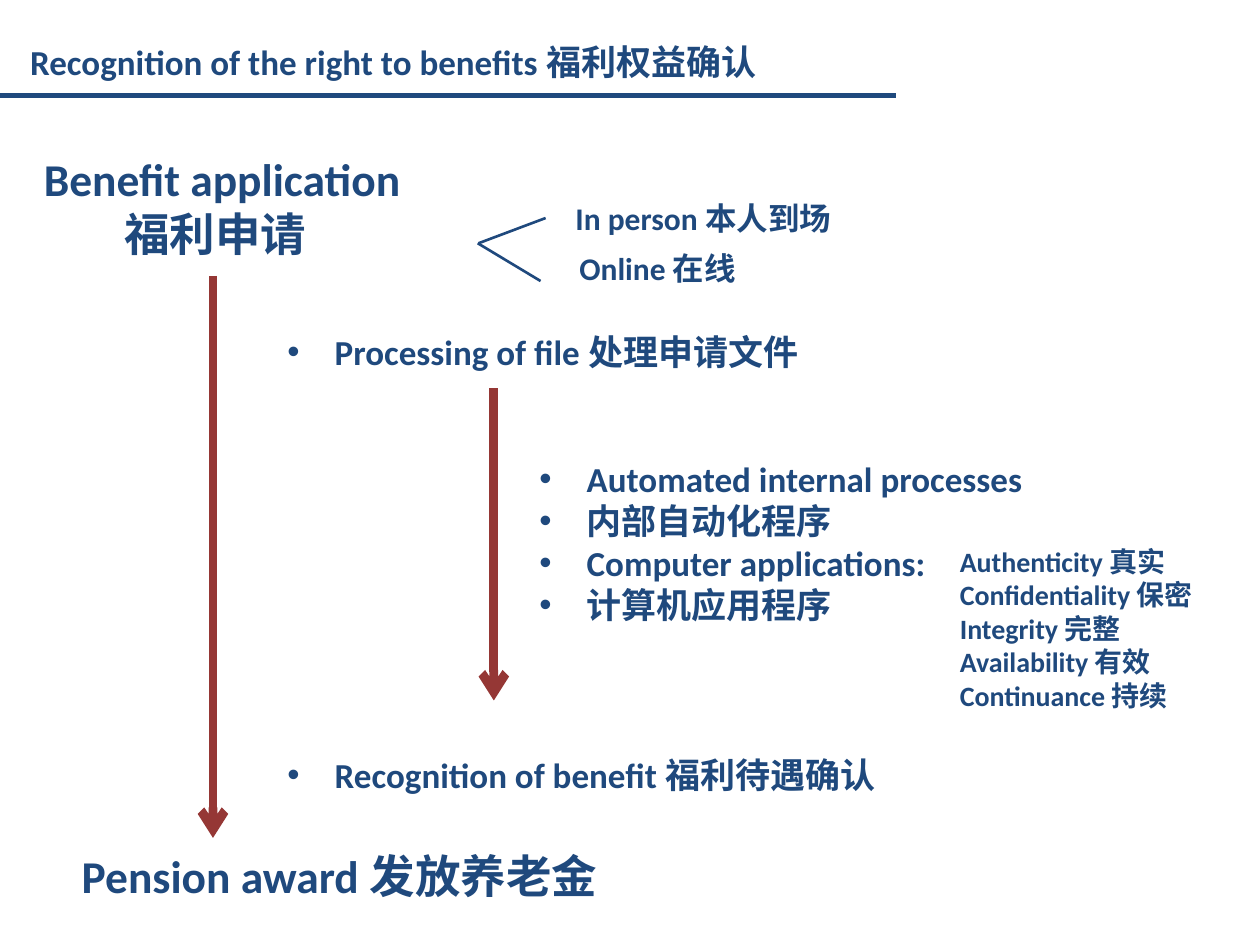
"""Builds the slide on recognising the right to benefits."""
from pptx import Presentation
from pptx.dml.color import RGBColor as Rgb
from pptx.enum.shapes import MSO_CONNECTOR as Connector
from pptx.enum.text import MSO_ANCHOR as Anchor, MSO_AUTO_SIZE as AutoSize, PP_ALIGN as Align
from pptx.oxml.ns import qn
from pptx.util import Pt
from lxml.etree import SubElement

COLOURS = {"navy": "1F497D", "red": "953735"}
FONT = "Calibri"
HANGING = 27
DEEP_INDENT = 171

TITLE = ("Recognition of the right to benefits 福利权益确认", (10, 19.4, 486, 31.7))
STEPS_AREA = (157, 185, 548.6, 273.6)
STEPS = [
    ("Processing of file 处理申请文件", 0, 0),
    ("Automated internal processes", 4, 49),
    ("内部自动化程序", 4, 0),
    ("Computer applications:", 4, 0),
    ("计算机应用程序", 4, 0),
    ("Recognition of benefit 福利待遇确认", 0, 73),
]
APPLICATION = (["Benefit application", "福利申请"], (8.6, 82.8, 229, 70.6))
LABELS = [
    (["Pension award 发放养老金"], (39.6, 481, 493, 38.9), 26),
    (["In person 本人到场"], (321.8, 110.2, 177.8, 28.8), 18),
    (["Online 在线"], (324, 139, 177.8, 28.8), 18),
    (["Authenticity 真实", "Confidentiality 保密", "Integrity 完整",
      "Availability 有效", "Continuance 持续"], (541.4, 307.4, 164.2, 104.4), 16),
]
LINES = [
    ((0, 54.7), (512, 54.7), "navy", 3, False),
    ((273.5, 139), (311.8, 124.6), "navy", 1.5, False),
    ((273, 139), (308.9, 160.6), "navy", 1.5, False),
    ((121.7, 157.7), (121.7, 478.8), "red", 5, True),
    ((282.2, 221.8), (282.2, 400.3), "red", 5, True),
]


def place(box, area):
    box.left, box.top, box.width, box.height = map(Pt, area)


def write(box, texts, size=20, align=Align.LEFT, wrap=True):
    """Fills a box with one formatted paragraph per text and returns them."""
    frame = box.text_frame
    frame.word_wrap = wrap
    frame.auto_size = AutoSize.NONE
    frame.vertical_anchor = Anchor.TOP
    frame.text = "\n".join(texts)
    for para in frame.paragraphs:
        para.alignment = align
        para.space_before = Pt(0)
        for span in para.runs:
            span.font.name = FONT
            span.font.size = Pt(size)
            span.font.bold = True
            span.font.color.rgb = Rgb.from_string(COLOURS["navy"])
    return frame.paragraphs


def indent(para, left, first=0):
    props = para._p.get_or_add_pPr()
    props.set("marL", str(Pt(left)))
    props.set("indent", str(Pt(first)))
    return props


def add_steps(body):
    place(body, STEPS_AREA)
    paras = write(body, [text for text, _, _ in STEPS])
    for para, (_, level, gap) in zip(paras, STEPS):
        para.level = level
        para.space_before = Pt(gap)
        props = indent(para, DEEP_INDENT if level else HANGING, -HANGING)
        SubElement(props, qn("a:buFont"), typeface="Arial")
        SubElement(props, qn("a:buChar"), char="•")


def add_line(page, start, end, colour, width, arrow):
    line = page.shapes.add_connector(Connector.STRAIGHT, *map(Pt, start + end))
    line.line.color.rgb = Rgb.from_string(COLOURS[colour])
    line.line.width = Pt(width)
    props = line.element.spPr
    if arrow:
        SubElement(props.find(qn("a:ln")), qn("a:tailEnd"), type="arrow")
    SubElement(props, qn("a:effectLst"))


def add_label(page, texts, area, size, **style):
    box = page.shapes.add_textbox(*map(Pt, area))
    return write(box, texts, size=size, **style)


def main():
    deck = Presentation()
    deck.slide_width, deck.slide_height = Pt(720), Pt(540)
    page = deck.slides.add_slide(deck.slide_layouts[1])
    title, body = page.placeholders
    place(title, TITLE[1])
    write(title, [TITLE[0]])
    add_steps(body)
    heading = add_label(page, *APPLICATION, 26, align=Align.CENTER, wrap=False)
    indent(heading[0], 8)
    for label in LABELS:
        add_label(page, *label)
    for line in LINES:
        add_line(page, *line)
    deck.save("out.pptx")


if __name__ == "__main__":
    main()
